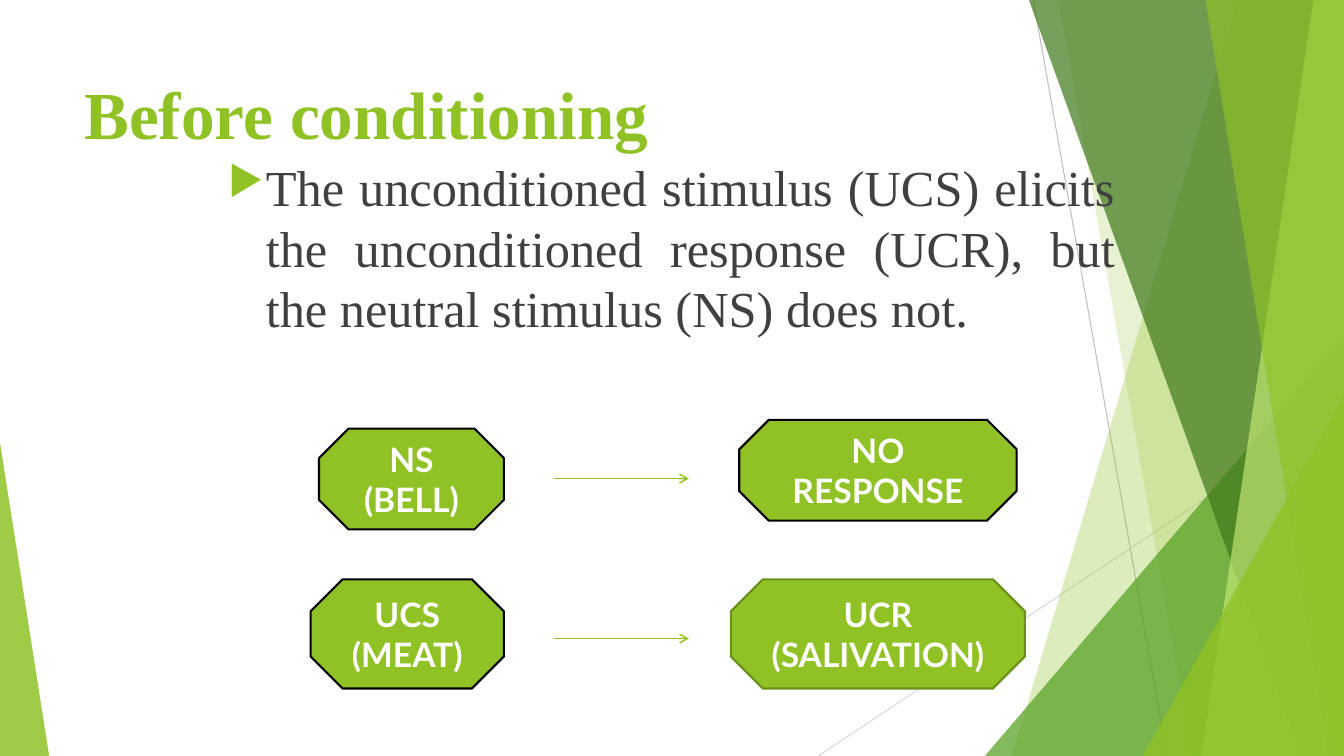
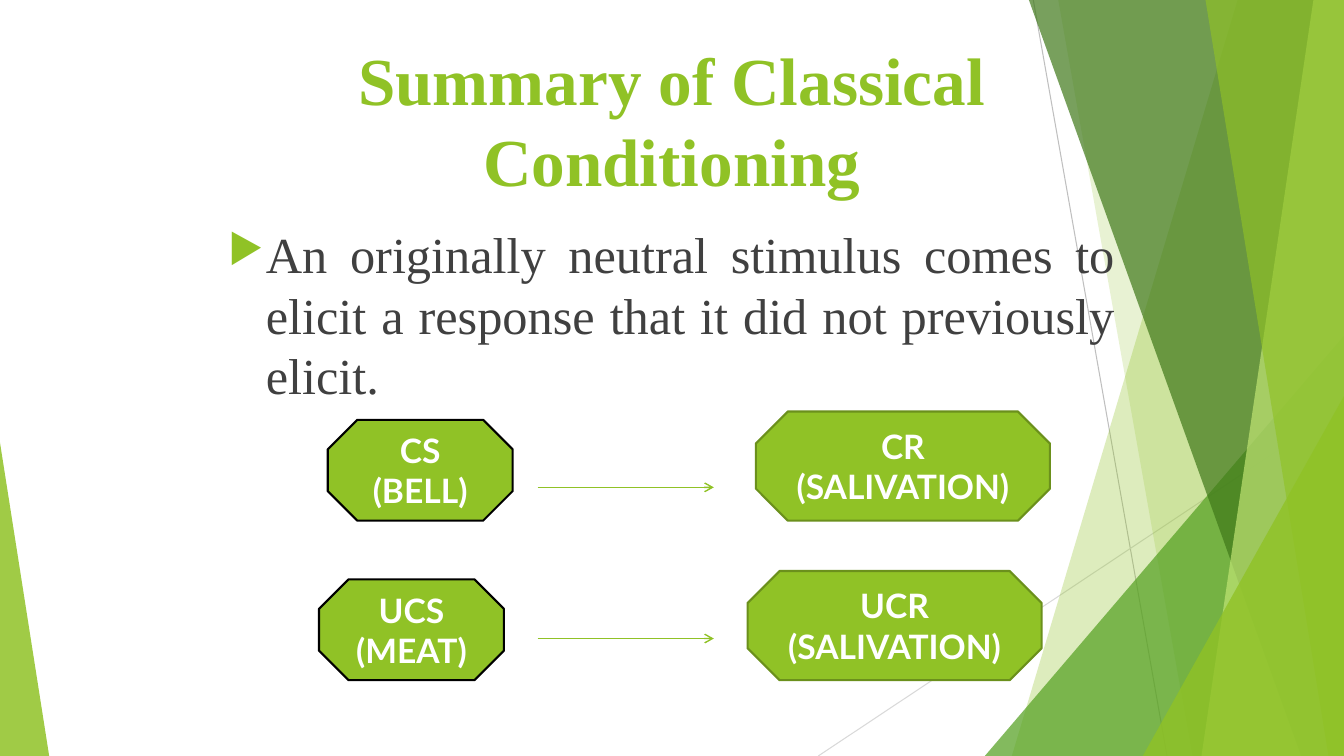
from lxml.etree import SubElement as Sub
from pptx import Presentation
from pptx.dml.color import RGBColor
from pptx.enum.shapes import MSO_CONNECTOR as Link, MSO_SHAPE as Kind
from pptx.enum.text import MSO_ANCHOR as Anchor, PP_ALIGN as Align
from pptx.oxml.ns import qn
from pptx.util import Cm, Pt

WIDE, HIGH = 33.87, 19.05
LIME, EDGE, BLACK, WHITE = "90C226", "6B901C", "000000", "FFFFFF"
SERIF, SANS = "Times New Roman", "Lato"


def tint(code):
    return RGBColor.from_string(code)


class Deck:
    styles = {
        "title": ({"name": SERIF, "size": Pt(48), "bold": True}, LIME),
        "body": ({"name": SERIF, "size": Pt(36)}, "404040"),
        "box": ({"name": SANS, "size": Pt(24), "bold": True}, WHITE),
    }
    rays = [((26.04, 0), (29.41, HIGH), "BFBFBF"),
            ((WIDE, 10.24), (20.62, HIGH), "D9D9D9")]
    decor = [
        ("band", (31.19, 25.5), LIME, 30),
        ("band", (26.67, 30.05), LIME, 20),
        ("wedge", (24.82, 8.46, 9.05, 1), "54A021", 72),
        ("band", (25.93, 32.79), "3F7819", 70),
        ("band", (33.1, 30.28), "C0E474", 70),
        ("band", (30.38, 33.48), LIME, 65),
        ("wedge", (28.8, 9.98, 5.07, 1), LIME, 80),
        ("wedge", (0, 11.15, 1.24, 0), LIME, 85),
    ]

    def __init__(self):
        self.prs = Presentation()
        self.prs.slide_width, self.prs.slide_height = Cm(WIDE), Cm(HIGH)
        self.shapes = None

    def slide(self):
        self.shapes = self.prs.slides.add_slide(self.prs.slide_layouts[6]).shapes
        for start, end, code in self.rays:
            self.line(start, end, code, 0.75)
        makers = {"band": self.band, "wedge": self.wedge}
        for kind, place, code, alpha in self.decor:
            self.glass(makers[kind](*place), code, alpha)

    def band(self, top, base):
        form = self.shapes.build_freeform(Cm(top), 0)
        form.add_line_segments(
            [(Cm(x), Cm(y)) for x, y in ((WIDE, 0), (WIDE, HIGH), (base, HIGH))])
        return form.convert_to_shape()

    def wedge(self, x, y, wide, peak):
        shape = self.shapes.add_shape(
            Kind.ISOSCELES_TRIANGLE, Cm(x), Cm(y), Cm(wide), Cm(HIGH - y))
        shape.adjustments[0] = peak
        return shape

    def paint(self, shape, code):
        shape.shadow.inherit = False
        shape.fill.solid()
        shape.fill.fore_color.rgb = tint(code)

    def glass(self, shape, code, alpha):
        self.paint(shape, code)
        shape.line.fill.background()
        color = shape._element.spPr.find(".//" + qn("a:srgbClr"))
        Sub(color, qn("a:alpha"), val=str(alpha * 1000))

    def line(self, start, end, code, width, arrow=False):
        line = self.shapes.add_connector(
            Link.STRAIGHT, *(Cm(v) for v in (*start, *end)))
        line.line.color.rgb = tint(code)
        line.line.width = Pt(width)
        props = line._element.spPr
        if arrow:
            Sub(props.find(qn("a:ln")), qn("a:tailEnd"), type="arrow")
        Sub(props, qn("a:effectLst"))

    def label(self, shape, text, style, align, anchor=Anchor.TOP):
        frame = shape.text_frame
        frame.word_wrap = True
        frame.vertical_anchor = anchor
        frame.text = text
        form, code = self.styles[style]
        for para in frame.paragraphs:
            para.alignment = align
            for run in para.runs:
                for key, value in form.items():
                    setattr(run.font, key, value)
                run.font.color.rgb = tint(code)
        return frame

    def title(self, text, place, align=Align.LEFT):
        area = self.shapes.add_textbox(*map(Cm, place))
        self.label(area, text, "title", align)

    def body(self, text, top):
        area = self.shapes.add_textbox(Cm(5.5), Cm(top), Cm(22.86), Cm(17.93 - top))
        frame = self.label(area, text, "body", Align.JUSTIFY)
        props = frame.paragraphs[0]._p.get_or_add_pPr()
        dent = Cm(0.95)
        props.set("marL", str(dent))
        props.set("indent", str(-dent))
        Sub(Sub(props, qn("a:buClr")), qn("a:srgbClr"), val=LIME)
        Sub(props, qn("a:buSzPct"), val="80000")
        Sub(props, qn("a:buChar"), char="▶")

    def box(self, text, place, edge=BLACK):
        shape = self.shapes.add_shape(Kind.OCTAGON, *map(Cm, place))
        self.paint(shape, LIME)
        shape.line.color.rgb = tint(edge)
        shape.line.width = Pt(1.5)
        self.label(shape, text, "box", Align.CENTER, Anchor.MIDDLE)

    def arrows(self, left, right, levels):
        for y in levels:
            self.line((left, y), (right, y), LIME, 1, True)


def main():
    deck = Deck()

    deck.slide()
    deck.title("Before conditioning", (1.88, 1.69, 23.88, 3.66))
    deck.body("The unconditioned stimulus (UCS) elicits the unconditioned "
              "response (UCR), but the neutral stimulus (NS) does not.", 3.81)
    deck.box("NS (BELL)", (8.04, 10.8, 4.66, 2.54))
    deck.box("UCS (MEAT)", (7.83, 14.6, 4.87, 2.75))
    deck.box("NO\vRESPONSE", (18.63, 10.58, 6.99, 2.54))
    deck.box("UCR\n(SALIVATION)", (18.42, 14.6, 7.41, 2.75), EDGE)
    deck.arrows(13.97, 17.36, (12.06, 16.09))

    deck.slide()
    deck.title("Summary of Classical Conditioning", (5.5, 0.85, 22.86, 4.66),
               Align.CENTER)
    deck.body("An originally neutral stimulus comes to elicit a response "
              "that it did not previously elicit.", 5.5)
    deck.box("CS (BELL)", (8.26, 10.58, 4.66, 2.54))
    deck.box("UCS (MEAT)", (8.04, 14.6, 4.66, 2.54))
    deck.box("CR\n(SALIVATION)", (19.05, 10.37, 7.41, 2.75), EDGE)
    deck.box("UCR\n(SALIVATION)", (18.84, 14.39, 7.41, 2.75), EDGE)
    deck.arrows(13.55, 17.99, (12.28, 16.09))

    deck.prs.save("out.pptx")


if __name__ == "__main__":
    main()
